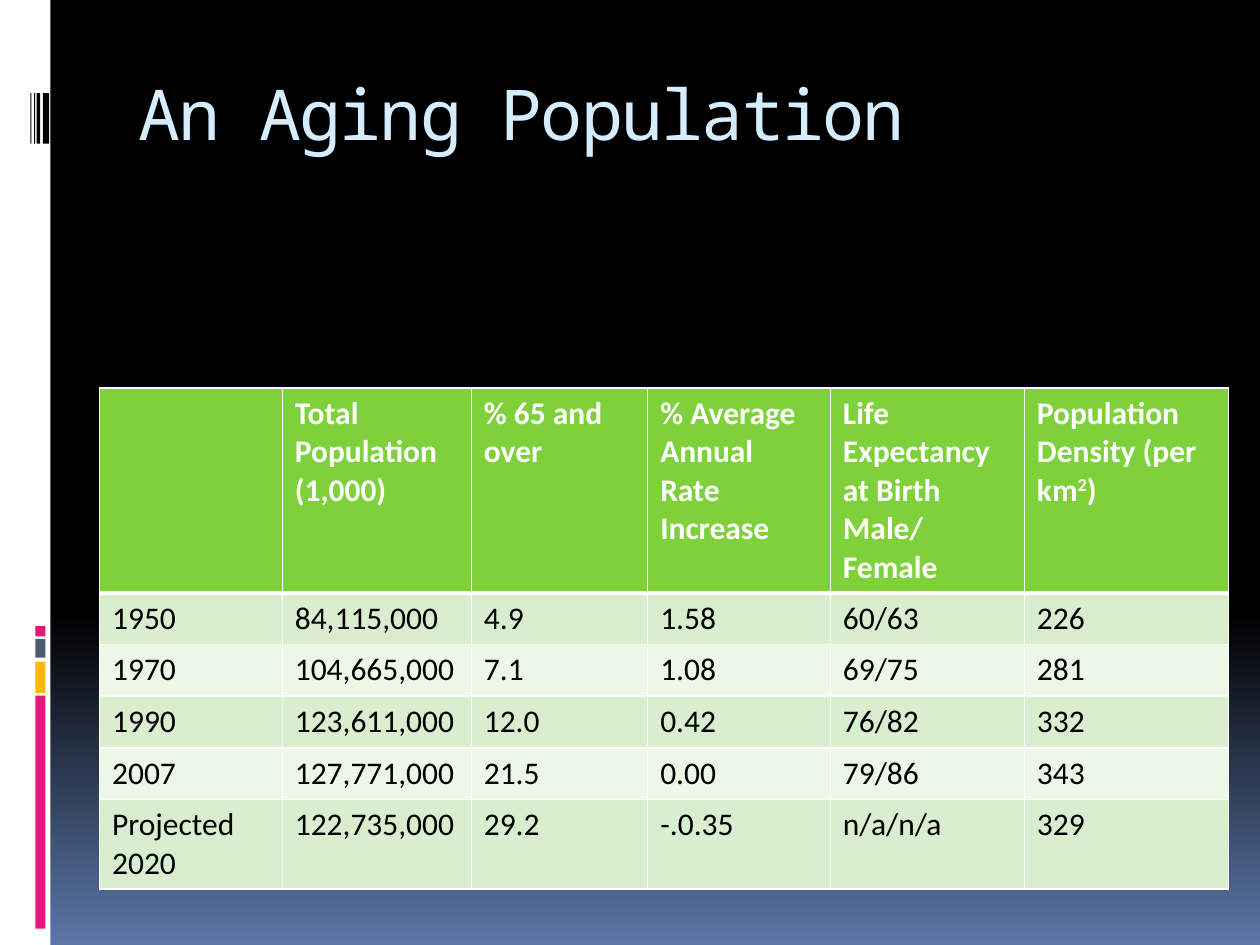
import pptx
import pptx.util
import pptx.dml.color
import pptx.enum.shapes
import pptx.enum.text
import pptx.oxml
import pptx.oxml.ns

Inches = pptx.util.Inches
Pt = pptx.util.Pt
RGBColor = pptx.dml.color.RGBColor

BLACK = RGBColor(0x00, 0x00, 0x00)
WHITE = RGBColor(0xFF, 0xFF, 0xFF)
BLUE = RGBColor(0x5B, 0x77, 0xA8)
PALE = RGBColor(0xD6, 0xEC, 0xFF)
PINK = RGBColor(0xEA, 0x15, 0x7A)
GOLD = RGBColor(0xFE, 0xB8, 0x0A)
SLATE = RGBColor(0x4E, 0x5B, 0x6F)
GREEN = RGBColor(0x7F, 0xD1, 0x3B)
MINT = RGBColor(0xD8, 0xEE, 0xCE)
LIGHT = RGBColor(0xEC, 0xF7, 0xE8)


def add_bar(left, top, width, height, color):
    bar = slide.shapes.add_shape(
        pptx.enum.shapes.MSO_SHAPE.RECTANGLE,
        Inches(left), Inches(top), Inches(width), Inches(height))
    bar.shadow.inherit = False
    bar.fill.solid()
    bar.fill.fore_color.rgb = color
    bar.line.fill.background()


def add_edges(cell, widths):
    props = cell._tc.get_or_add_tcPr()
    for spot, (side, width) in enumerate(zip("LRTB", widths)):
        props.insert(spot, pptx.oxml.parse_xml(
            f'<a:ln{side} {pptx.oxml.ns.nsdecls("a")} w="{Pt(width)}">'
            f'<a:solidFill><a:srgbClr val="{WHITE}"/></a:solidFill></a:ln{side}>'))


deck = pptx.Presentation()
deck.slide_width = Inches(10)
deck.slide_height = Inches(7.5)
slide = deck.slides.add_slide(deck.slide_layouts[5])

back = slide.background.fill
back.gradient()
back.gradient_angle = 270
for stop, place, color in zip(back.gradient_stops, (0.65, 1), (BLACK, BLUE)):
    stop.position = place
    stop.color.rgb = color

add_bar(0, 0, 0.4, 7.5, WHITE)
for top, height, color in [(5.52, 1.85, PINK), (5.25, 0.25, GOLD),
                           (5.07, 0.15, SLATE), (4.97, 0.08, PINK)]:
    add_bar(0.28, top, 0.08, height, color)
for left, width in [(0.34, 0.05), (0.29, 0.03), (0.27, 0.01), (0.24, 0.01)]:
    add_bar(left, 0.74, width, 0.4, BLACK)

title = slide.shapes.title
title.left, title.top = Inches(1), Inches(0.56)
title.width, title.height = Inches(8.5), Inches(1)
frame = title.text_frame
frame.text = "An Aging Population"
frame.word_wrap = True
frame.margin_top = 0
frame.vertical_anchor = pptx.enum.text.MSO_ANCHOR.TOP
line = frame.paragraphs[0]
line.alignment = pptx.enum.text.PP_ALIGN.LEFT
run = line.runs[0]
run.font.name = "Noto Sans Mono"
run.font.size = Pt(40)
run.font.color.rgb = PALE
run._r.get_or_add_rPr().set("spc", "-100")

data = [
    ["", "Total Population (1,000)", "% 65 and over",
     "% Average Annual Rate Increase",
     "Life Expectancy at Birth\nMale/Female", "Population Density (per km"],
    ["1950", "84,115,000", "4.9", "1.58", "60/63", "226"],
    ["1970", "104,665,000", "7.1", "1.08", "69/75", "281"],
    ["1990", "123,611,000", "12.0", "0.42", "76/82", "332"],
    ["2007", "127,771,000", "21.5", "0.00", "79/86", "343"],
    ["Projected 2020", "122,735,000", "29.2", "-.0.35", "n/a/n/a", "329"],
]
widths = [1.45, 1.5, 1.4, 1.45, 1.54, 1.62]
heights = [1.62] + [0.41] * 4 + [0.71]
table = slide.shapes.add_table(
    len(data), len(widths), Inches(0.79), Inches(3.08),
    Inches(sum(widths)), Inches(sum(heights))).table
for col, width in zip(table.columns, widths):
    col.width = Inches(width)
for row, height in zip(table.rows, heights):
    row.height = Inches(height)

for r, texts in enumerate(data):
    head = r == 0
    for c, text in enumerate(texts):
        cell = table.cell(r, c)
        cell.text_frame.text = text
        if head and c == len(widths) - 1:
            line = cell.text_frame.paragraphs[0]
            power = line.add_run()
            power.text = "2"
            power._r.get_or_add_rPr().set("baseline", "30000")
            line.add_run().text = ")"
        for line in cell.text_frame.paragraphs:
            line.font.size = Pt(18)
            for run in line.runs:
                run.font.name = "Calibri"
                run.font.size = Pt(18)
                run.font.bold = head
                run.font.color.rgb = WHITE if head else BLACK
        cell.fill.solid()
        cell.fill.fore_color.rgb = GREEN if head else MINT if r % 2 else LIGHT
        add_edges(cell, (1, 1, 3 if r == 1 else 1, 3 if head else 1))

deck.save("out.pptx")
